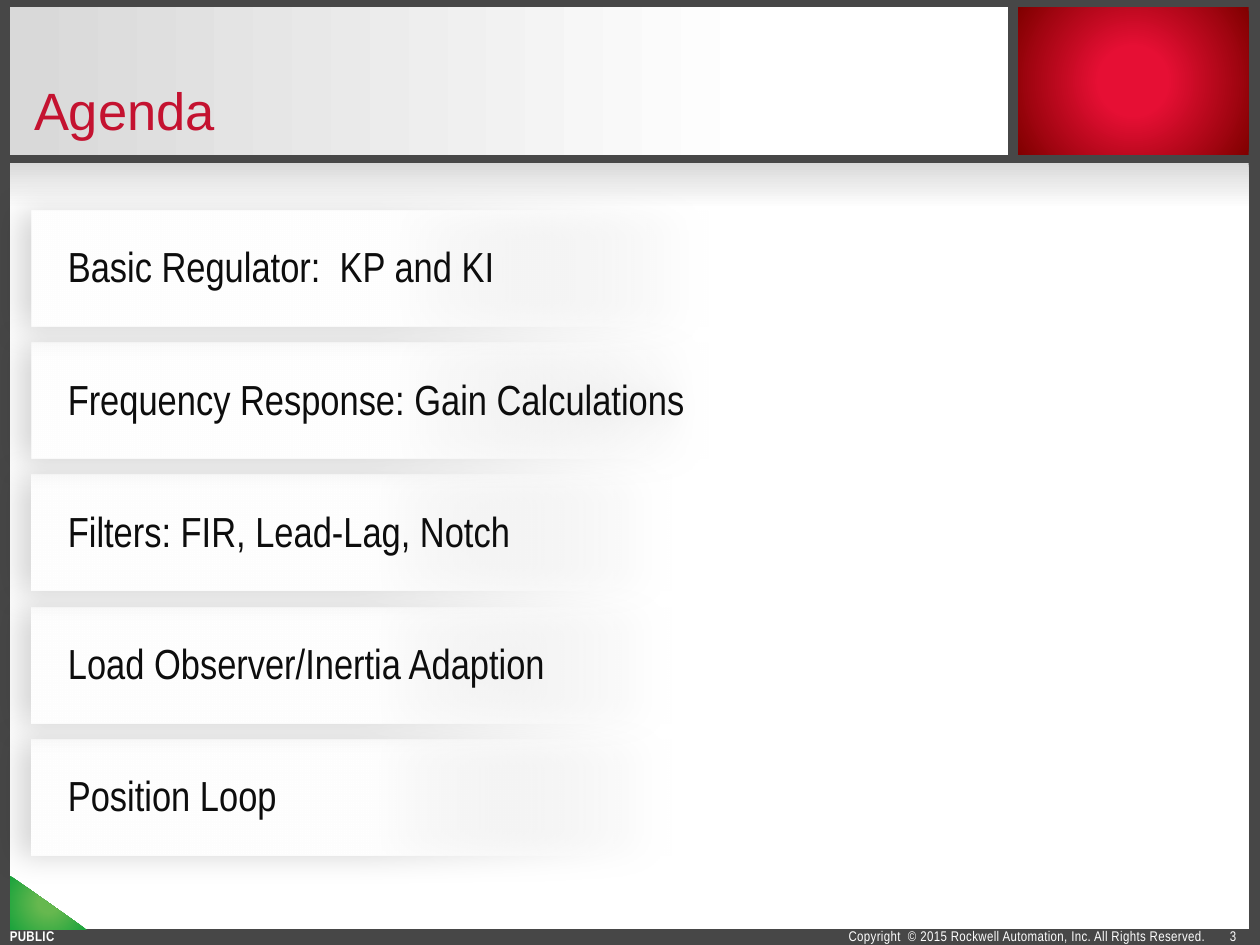
"""Build the agenda slide with its framed header, five topic bars and footer."""
from dataclasses import dataclass
from typing import Optional

from pptx import Presentation
from pptx.dml.color import RGBColor
from pptx.enum.shapes import MSO_SHAPE
from pptx.enum.text import MSO_ANCHOR, MSO_AUTO_SIZE, PP_ALIGN
from pptx.oxml import parse_xml
from pptx.oxml.ns import nsdecls, qn
from pptx.util import Inches, Pt


@dataclass(frozen=True)
class Theme:
    """Colours, fonts and type sizes of the slide."""
    frame: str = "474747"
    white: str = "FFFFFF"
    grey: str = "D9D9D9"
    red: str = "E60F34"
    dark_red: str = "800000"
    light_green: str = "66B84F"
    green: str = "1BA33C"
    title: str = "C41230"
    ink: str = "0D0D0D"
    shadow: str = "000000"
    title_font: str = "Arial"
    body_font: str = "Arial Narrow"
    title_size: int = 30
    topic_size: int = 24
    footer_size: int = 8


@dataclass(frozen=True)
class Area:
    """Position and size in inches."""
    left: float
    top: float
    width: float
    height: float


@dataclass(frozen=True)
class Stop:
    """Gradient stop with position and opacity in percent."""
    position: int
    color: str
    opacity: int = 100


@dataclass(frozen=True)
class Panel:
    """Gradient shape; no angle means a radial gradient."""
    area: Area
    stops: tuple[Stop, Stop]
    angle: Optional[int] = None
    preset: MSO_SHAPE = MSO_SHAPE.RECTANGLE


@dataclass(frozen=True)
class Topic:
    """Agenda entry and the width of its bar."""
    text: str
    width: float


THEME = Theme()
PANELS = (
    Panel(Area(0.08, 1.29, 9.83, 6.08), (Stop(0, THEME.grey), Stop(6, THEME.white)), 90),
    Panel(Area(0.08, 0.06, 7.92, 1.17), (Stop(1, THEME.grey), Stop(75, THEME.white)), 0),
    Panel(Area(8.08, 0.06, 1.83, 1.17), (Stop(25, THEME.red), Stop(100, THEME.dark_red))),
    Panel(Area(0.08, 6.95, 0.61, 0.43), (Stop(22, THEME.light_green), Stop(99, THEME.green)),
          preset=MSO_SHAPE.RIGHT_TRIANGLE),
)
TOPICS = (
    Topic("Basic Regulator:  KP and KI", 5.37),
    Topic("Frequency Response: Gain Calculations", 5.37),
    Topic("Filters: FIR, Lead-Lag, Notch", 5.08),
    Topic("Load Observer/Inertia Adaption", 5.08),
    Topic("Position Loop", 5.08),
)
TOPIC_LEFT, TOPIC_TOP, TOPIC_HEIGHT, TOPIC_PITCH = 0.25, 1.67, 0.92, 1.05
TOPIC_STOPS = (Stop(53, THEME.white), Stop(100, THEME.white, 0))


def lengths(area: Area) -> tuple:
    """Return the four lengths of an area."""
    return Inches(area.left), Inches(area.top), Inches(area.width), Inches(area.height)


def write(shape, text: str, *, size: int, color: str, font: str = THEME.body_font,
          bold: bool = False, align=PP_ALIGN.LEFT, anchor=MSO_ANCHOR.TOP,
          line_spacing=None, indent: float = 0, spacing: int = 0, wrap: bool = True) -> None:
    """Put one formatted paragraph into a shape."""
    frame = shape.text_frame
    frame.auto_size = MSO_AUTO_SIZE.NONE
    frame.word_wrap = wrap
    frame.vertical_anchor = anchor
    para = frame.paragraphs[0]
    para.alignment = align
    para.line_spacing = line_spacing
    if indent:
        properties = para._p.get_or_add_pPr()
        properties.set("marL", str(Inches(indent)))
        properties.set("indent", "0")
    span = para.add_run()
    span.text = text
    span.font.name = font
    span.font.size = Pt(size)
    span.font.bold = bold
    span.font.color.rgb = RGBColor.from_string(color)
    if spacing:
        span.font._element.set("spc", str(spacing))


def add_panel(slide, panel: Panel):
    """Draw a gradient shape without outline or shadow."""
    shape = slide.shapes.add_shape(panel.preset, *lengths(panel.area))
    shape.shadow.inherit = False
    shape.line.fill.background()
    shape.fill.background()
    stops = "".join(
        f'<a:gs pos="{stop.position * 1000}"><a:srgbClr val="{stop.color}">'
        f'<a:alpha val="{stop.opacity * 1000}"/></a:srgbClr></a:gs>'
        for stop in panel.stops)
    if panel.angle is None:
        course = ('<a:path path="circle"><a:fillToRect l="50000" t="50000" '
                  'r="50000" b="50000"/></a:path>')
    else:
        course = f'<a:lin ang="{panel.angle * 60000}" scaled="0"/>'
    gradient = parse_xml(f'<a:gradFill {nsdecls("a")} rotWithShape="1">'
                         f'<a:gsLst>{stops}</a:gsLst>{course}</a:gradFill>')
    properties = shape._element.spPr
    properties.replace(properties.find(qn("a:noFill")), gradient)
    return shape


def add_topic(slide, topic: Topic, row: int) -> None:
    """Draw one agenda bar with its soft shadow and text."""
    area = Area(TOPIC_LEFT, TOPIC_TOP + row * TOPIC_PITCH, topic.width, TOPIC_HEIGHT)
    bar = add_panel(slide, Panel(area, TOPIC_STOPS, 0))
    bar._element.spPr.find(qn("a:effectLst")).append(parse_xml(
        f'<a:outerShdw {nsdecls("a")} blurRad="{Pt(17.5)}" dist="{Pt(7)}" '
        f'dir="{176 * 60000}" algn="ctr" rotWithShape="0"><a:srgbClr val="{THEME.shadow}">'
        '<a:alpha val="17000"/></a:srgbClr></a:outerShdw>'))
    write(bar, topic.text, size=THEME.topic_size, color=THEME.ink,
          anchor=MSO_ANCHOR.MIDDLE, line_spacing=Pt(26), indent=0.19)


def add_footer(slide, text: str, area: Area, **text_format) -> None:
    """Draw one small white footer text."""
    box = slide.shapes.add_textbox(*lengths(area))
    write(box, text, size=THEME.footer_size, color=THEME.white, **text_format)


def place_title(slide, text: str) -> None:
    """Format the title placeholder and bring it in front of the panels."""
    title = slide.shapes.title
    title.left, title.top, title.width, title.height = lengths(Area(0.17, 0.17, 7.75, 1))
    write(title, text, size=THEME.title_size, color=THEME.title, font=THEME.title_font,
          anchor=MSO_ANCHOR.BOTTOM, line_spacing=Pt(30))
    slide.shapes._spTree.append(title._element)


def main() -> None:
    """Build and save the deck."""
    deck = Presentation()
    deck.slide_width, deck.slide_height = Inches(10), Inches(7.5)
    slide = deck.slides.add_slide(deck.slide_layouts[5])
    background = slide.background.fill
    background.solid()
    background.fore_color.rgb = RGBColor.from_string(THEME.frame)
    for panel in PANELS:
        add_panel(slide, panel)
    add_footer(slide, "Copyright  © 2015 Rockwell Automation, Inc. All Rights Reserved.",
               Area(-0.02, 7.31, 9.69, 0.24), align=PP_ALIGN.RIGHT, spacing=20)
    add_footer(slide, "PUBLIC", Area(-0.02, 7.33, 0.56, 0.21), bold=True, spacing=20,
               anchor=MSO_ANCHOR.BOTTOM, line_spacing=0.8, wrap=False)
    add_footer(slide, "3", Area(9.42, 7.31, 0.49, 0.25), align=PP_ALIGN.RIGHT)
    place_title(slide, "Agenda")
    for row, topic in reversed(tuple(enumerate(TOPICS))):
        add_topic(slide, topic, row)
    deck.save("out.pptx")


if __name__ == "__main__":
    main()
